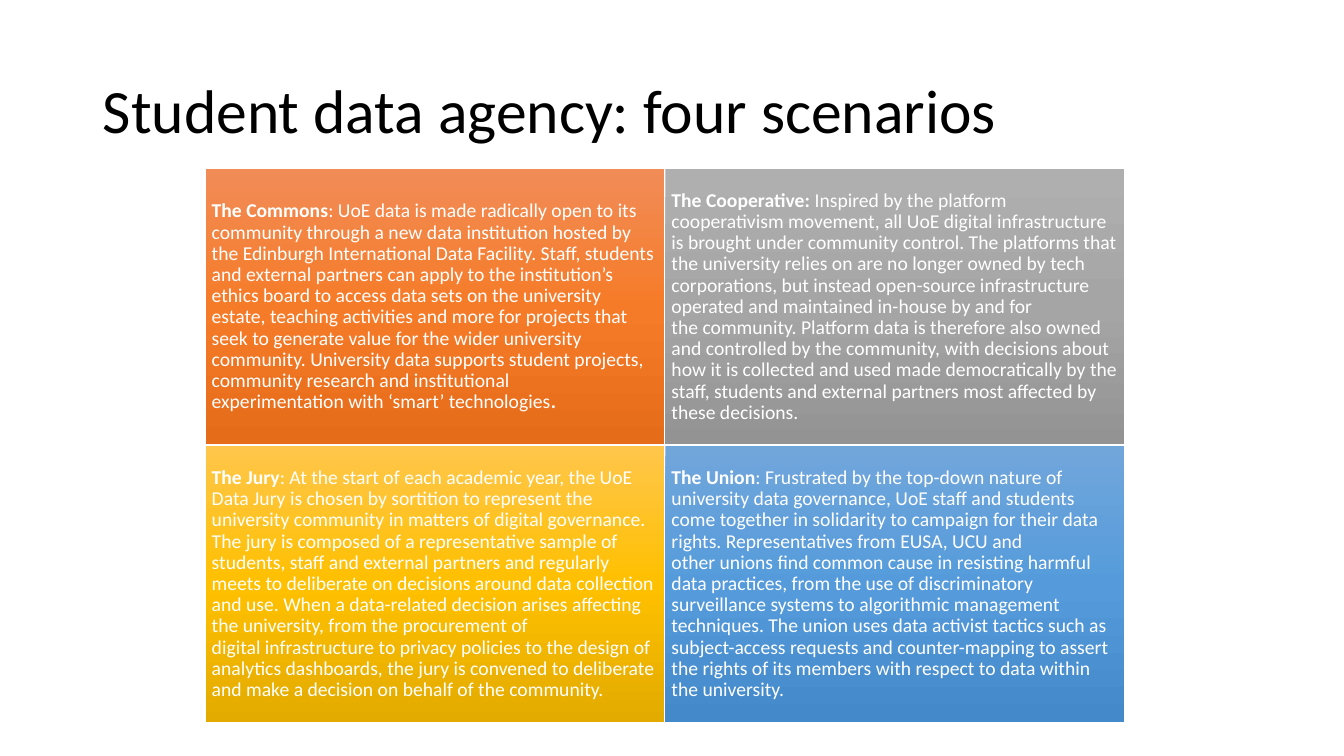
import copy

import pptx
import pptx.dml.color
import pptx.enum.shapes
import pptx.enum.text
import pptx.oxml.ns
import pptx.util

Inches = pptx.util.Inches
RGBColor = pptx.dml.color.RGBColor

# Content: "~" marks a narrow no-break space
NARROW_SPACE = chr(0x202F)
TITLE = "Student data agency: four scenarios"
BLACK = RGBColor(0x00, 0x00, 0x00)
WHITE = RGBColor(0xFF, 0xFF, 0xFF)
ORANGE = [RGBColor(0xF1, 0x8C, 0x57), RGBColor(0xF6, 0x7B, 0x28), RGBColor(0xE5, 0x6C, 0x19)]
GREY = [RGBColor(0xAF, 0xAF, 0xAF), RGBColor(0xA5, 0xA5, 0xA5), RGBColor(0x93, 0x93, 0x93)]
GOLD = [RGBColor(0xFF, 0xC6, 0x4B), RGBColor(0xFF, 0xC0, 0x00), RGBColor(0xE3, 0xAB, 0x00)]
BLUE = [RGBColor(0x71, 0xA6, 0xDB), RGBColor(0x55, 0x9B, 0xDB), RGBColor(0x44, 0x8A, 0xCA)]

# Each scenario: gradient colours, then runs of (text, bold)
SCENARIOS = [
    (ORANGE, [
        ("The Commons", True),
        (": UoE data is made radically open to its community through a new~data "
         "institution hosted by the Edinburgh International Data~Facility. Staff, "
         "students and external partners can apply to the~institution’s ethics board "
         "to access data sets on the university estate,~teaching activities and more "
         "for projects that seek to generate~value for the wider university community. "
         "University data supports student~projects, community research and "
         "institutional experimentation~with ‘smart’ technologies", False),
        (".", True),
    ]),
    (GREY, [
        ("The Cooperative: ", True),
        ("Inspired by the platform cooperativism movement, all UoE "
         "digital~infrastructure is brought under community control. The "
         "platforms~that the university relies on are no longer owned by tech "
         "corporations, but~instead open-source infrastructure operated and "
         "maintained in-house by and~for the~community. Platform data is therefore "
         "also owned and~controlled by the community, with decisions about how it is "
         "collected~and used made democratically by the staff, students and "
         "external~partners most affected by these decisions.", False),
    ]),
    (GOLD, [
        ("The Jury", True),
        (": At the start of each academic year, the UoE Data Jury is chosen "
         "by~sortition to represent the university community in matters of "
         "digital~governance. The jury is composed of a representative sample of "
         "students, staff and external partners and regularly meets to deliberate~on "
         "decisions around data collection and use. When a data-related~decision "
         "arises affecting the university, from the procurement of "
         "digital~infrastructure to privacy policies to the design of analytics "
         "dashboards,~the jury is convened to deliberate and make a decision on "
         "behalf of the community.", False),
    ]),
    (BLUE, [
        ("The Union", True),
        (": Frustrated by the top-down nature of university data governance,~UoE "
         "staff and students come together in solidarity to campaign for~their data "
         "rights. Representatives from EUSA, UCU and other~unions find common cause "
         "in resisting harmful data practices,~from the use of discriminatory "
         "surveillance systems to algorithmic~management techniques. The union uses "
         "data activist tactics such~as subject-access requests and counter-mapping "
         "to assert the~rights of its members with respect to data within "
         "the~university.", False),
    ]),
]

# Grid of cards, in inches
LEFT, TOP = 2.04, 1.68
CARD_W, CARD_H = 4.55, 2.73
GAP_X, GAP_Y = 0.01, 0.02
INSET = Inches(0.06)


def add_run(p, text, size, color, bold=False):
    r = p.add_run()
    r.text = text.replace("~", NARROW_SPACE)
    r.font.name = "Calibri"
    r.font.size = pptx.util.Pt(size)
    r.font.bold = bold
    r.font.color.rgb = color


def fill_gradient(sp, colors):
    sp.fill.gradient()
    sp.fill.gradient_angle = 270
    stop_list = sp._element.spPr.find(".//" + pptx.oxml.ns.qn("a:gsLst"))
    stop_list.append(copy.deepcopy(stop_list[-1]))
    for stop, position, color in zip(sp.fill.gradient_stops, (0, 0.5, 1), colors):
        stop.position = position
        stop.color.rgb = color


def add_card(slide, index, colors, runs):
    row, column = divmod(index, 2)
    sp = slide.shapes.add_shape(
        pptx.enum.shapes.MSO_SHAPE.RECTANGLE,
        Inches(LEFT + column * (CARD_W + GAP_X)), Inches(TOP + row * (CARD_H + GAP_Y)),
        Inches(CARD_W), Inches(CARD_H))
    sp.shadow.inherit = False
    sp.line.fill.background()
    fill_gradient(sp, colors)
    tf = sp.text_frame
    tf.word_wrap = True
    tf.vertical_anchor = pptx.enum.text.MSO_ANCHOR.MIDDLE
    tf.margin_left = tf.margin_right = tf.margin_top = tf.margin_bottom = INSET
    p = tf.paragraphs[0]
    p.alignment = pptx.enum.text.PP_ALIGN.LEFT
    p.line_spacing = 0.9
    for text, bold in runs:
        add_run(p, text, 14, WHITE, bold)


def main():
    prs = pptx.Presentation()
    prs.slide_width, prs.slide_height = Inches(13.33), Inches(7.5)
    slide = prs.slides.add_slide(prs.slide_layouts[5])

    # Title
    title = slide.shapes.title
    title.left, title.top = Inches(0.92), Inches(0.4)
    title.width, title.height = Inches(11.5), Inches(1.45)
    title.text_frame.vertical_anchor = pptx.enum.text.MSO_ANCHOR.MIDDLE
    p = title.text_frame.paragraphs[0]
    p.alignment = pptx.enum.text.PP_ALIGN.LEFT
    p.line_spacing = 0.9
    add_run(p, TITLE, 44, BLACK)

    # Scenario cards
    for index, (colors, runs) in enumerate(SCENARIOS):
        add_card(slide, index, colors, runs)

    prs.save("out.pptx")


if __name__ == "__main__":
    main()
